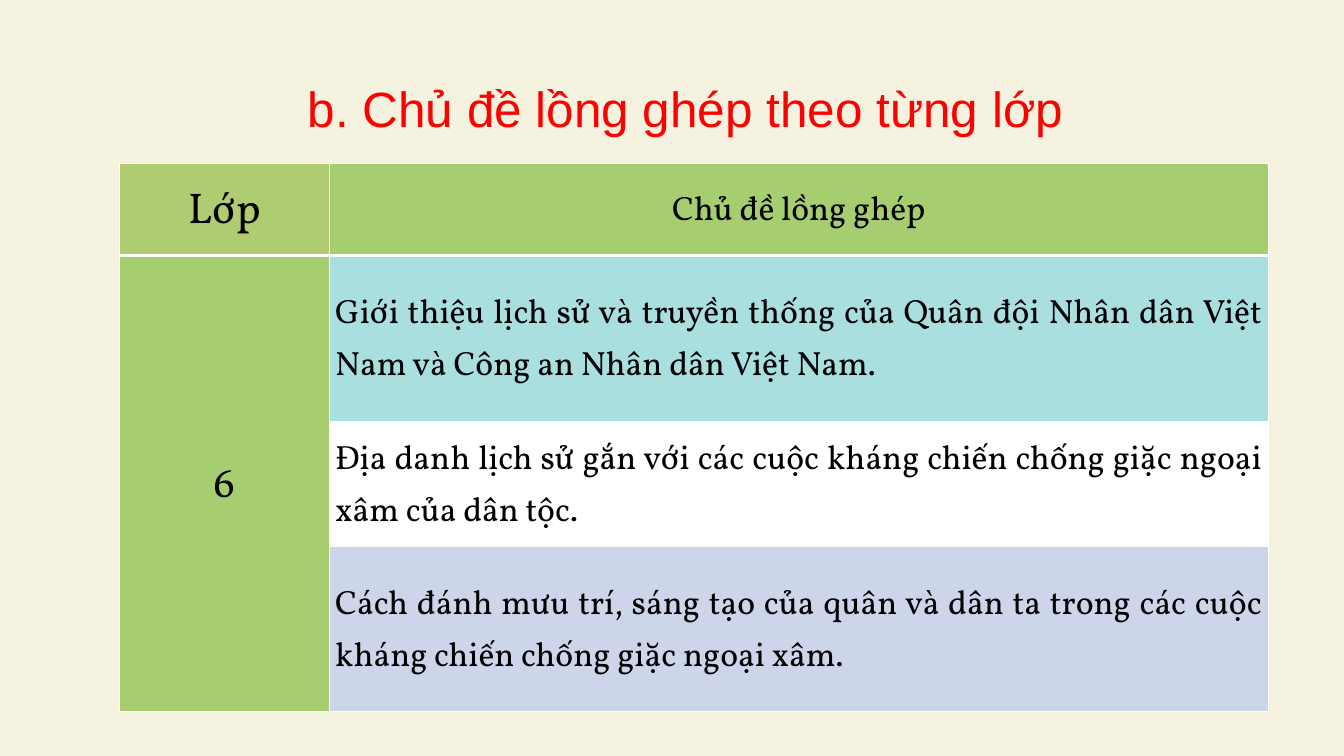
"""Build the slide that lists the integrated topics for grade 6."""
from dataclasses import dataclass

import lxml.etree
import pptx
import pptx.dml.color
import pptx.enum.text
import pptx.oxml.ns
import pptx.util

Cm = pptx.util.Cm
Pt = pptx.util.Pt
Align = pptx.enum.text.PP_ALIGN
Anchor = pptx.enum.text.MSO_ANCHOR


@dataclass(frozen=True)
class Theme:
    """Colours, fonts and type sizes of the slide."""
    background: str = "F5F2E0"
    title: str = "FF0000"
    text: str = "000000"
    border: str = "FFFFFF"
    corner: str = "AFCD70"
    header: str = "A6CD70"
    topics: tuple = ("A9DFDF", "FFFFFF", "CCD5EA")
    title_font: str = "Arial"
    table_font: str = "Vollkorn"
    title_size: float = 53
    corner_size: float = 46
    grade_size: float = 45
    topic_size: float = 36
    table_leading: float = 1.56
    thin_line: float = 1.36
    thick_line: float = 4.23


THEME = Theme()
TOPICS = (
    "Giới thiệu lịch sử và truyền thống của Quân đội Nhân dân Việt Nam và Công an Nhân dân Việt Nam.",
    "Địa danh lịch sử gắn với các cuộc kháng chiến chống giặc ngoại xâm của dân tộc.",
    "Cách đánh mưu trí, sáng tạo của quân và dân ta trong các cuộc kháng chiến chống giặc ngoại xâm.",
)
COLUMN_WIDTHS = (7.92, 35.5)
ROW_HEIGHTS = (3.48, 6.27, 4.75, 6.22)


def rgb(color):
    """Return a colour object for a hexadecimal string."""
    return pptx.dml.color.RGBColor.from_string(color)


def write_text(text_frame, text, font, size, color, alignment, leading):
    """Write one formatted run into the first paragraph of a text frame."""
    paragraph = text_frame.paragraphs[0]
    paragraph.alignment = alignment
    paragraph.line_spacing = Pt(leading)
    paragraph.space_before = Pt(0)
    run = paragraph.add_run()
    run.text = text
    run.font.name = font
    run.font.size = Pt(size)
    run.font.bold = False
    run.font.color.rgb = rgb(color)


def set_title(slide, text):
    """Place and format the title placeholder."""
    title = slide.shapes.title
    title.left, title.top, title.width, title.height = Cm(11.63), Cm(2.29), Cm(36.3), Cm(2.92)
    text_frame = title.text_frame
    text_frame.margin_left = text_frame.margin_right = 0
    text_frame.margin_top = text_frame.margin_bottom = 0
    text_frame.vertical_anchor = Anchor.TOP
    text_frame.auto_size = pptx.enum.text.MSO_AUTO_SIZE.NONE
    text_frame.word_wrap = True
    write_text(text_frame, text, THEME.title_font, THEME.title_size, THEME.title, Align.JUSTIFY, 82.7)


def set_borders(cell, top, bottom):
    """Draw the four borders of a cell, with the given top and bottom widths."""
    properties = cell._tc.get_or_add_tcPr()
    widths = {"a:lnL": THEME.thin_line, "a:lnR": THEME.thin_line, "a:lnT": top, "a:lnB": bottom}
    for position, (tag, width) in enumerate(widths.items()):
        line = lxml.etree.Element(pptx.oxml.ns.qn(tag), w=str(int(Pt(width))))
        fill = lxml.etree.SubElement(line, pptx.oxml.ns.qn("a:solidFill"))
        lxml.etree.SubElement(fill, pptx.oxml.ns.qn("a:srgbClr"), val=THEME.border)
        properties.insert(position, line)


def fill_cell(cell, text, size, color, alignment=Align.CENTER):
    """Give a cell its fill, margins and text."""
    cell.fill.solid()
    cell.fill.fore_color.rgb = rgb(color)
    cell.margin_left = cell.margin_right = cell.margin_top = cell.margin_bottom = Cm(0.23)
    cell.vertical_anchor = Anchor.MIDDLE
    write_text(cell.text_frame, text, THEME.table_font, size, THEME.text, alignment,
               size * THEME.table_leading)


def add_topic_table(slide):
    """Add the table of topics with the grade merged down its first column."""
    frame = slide.shapes.add_table(
        len(ROW_HEIGHTS), len(COLUMN_WIDTHS), Cm(4.52), Cm(6.17),
        Cm(sum(COLUMN_WIDTHS)), Cm(sum(ROW_HEIGHTS)))
    table = frame.table
    table.first_row = table.horz_banding = False
    for column, width in zip(table.columns, COLUMN_WIDTHS):
        column.width = Cm(width)
    for index, (row, height) in enumerate(zip(table.rows, ROW_HEIGHTS)):
        row.height = Cm(height)
        top = THEME.thick_line if index == 1 else THEME.thin_line
        bottom = THEME.thick_line if index == 0 else THEME.thin_line
        for cell in row.cells:
            set_borders(cell, top, bottom)

    table.cell(1, 0).merge(table.cell(len(TOPICS), 0))
    fill_cell(table.cell(0, 0), "Lớp", THEME.corner_size, THEME.corner)
    fill_cell(table.cell(0, 1), "Chủ đề lồng ghép", THEME.topic_size, THEME.header)
    fill_cell(table.cell(1, 0), "6", THEME.grade_size, THEME.header)
    for index, (topic, color) in enumerate(zip(TOPICS, THEME.topics), start=1):
        fill_cell(table.cell(index, 1), topic, THEME.topic_size, color, Align.JUSTIFY)


def main():
    """Build and save the presentation."""
    presentation = pptx.Presentation()
    presentation.slide_width = Cm(50.8)
    presentation.slide_height = Cm(28.58)
    slide = presentation.slides.add_slide(presentation.slide_layouts.get_by_name("Title Only"))
    slide.background.fill.solid()
    slide.background.fill.fore_color.rgb = rgb(THEME.background)
    set_title(slide, "b. Chủ đề lồng ghép theo từng lớp")
    add_topic_table(slide)
    presentation.save("out.pptx")


if __name__ == "__main__":
    main()
